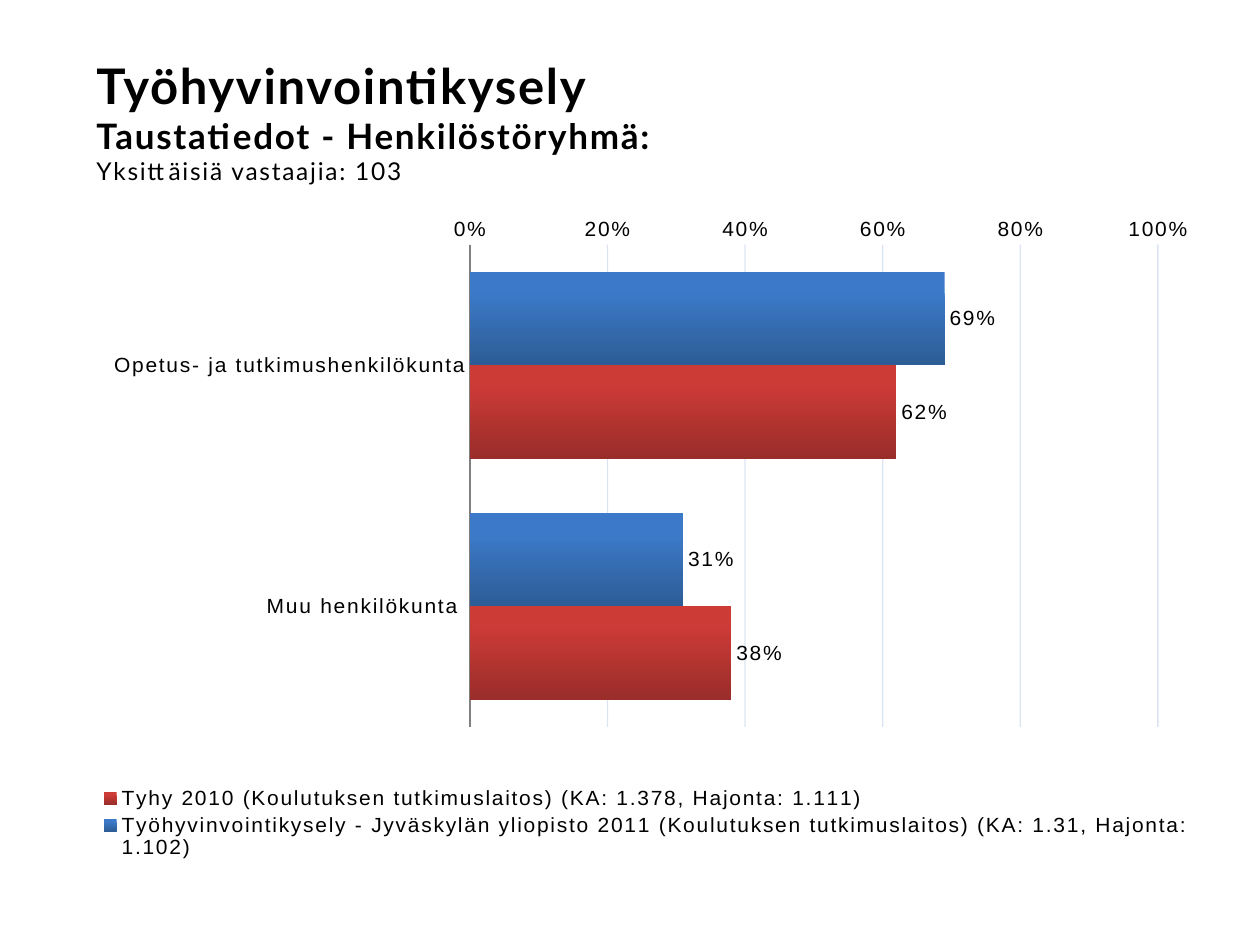
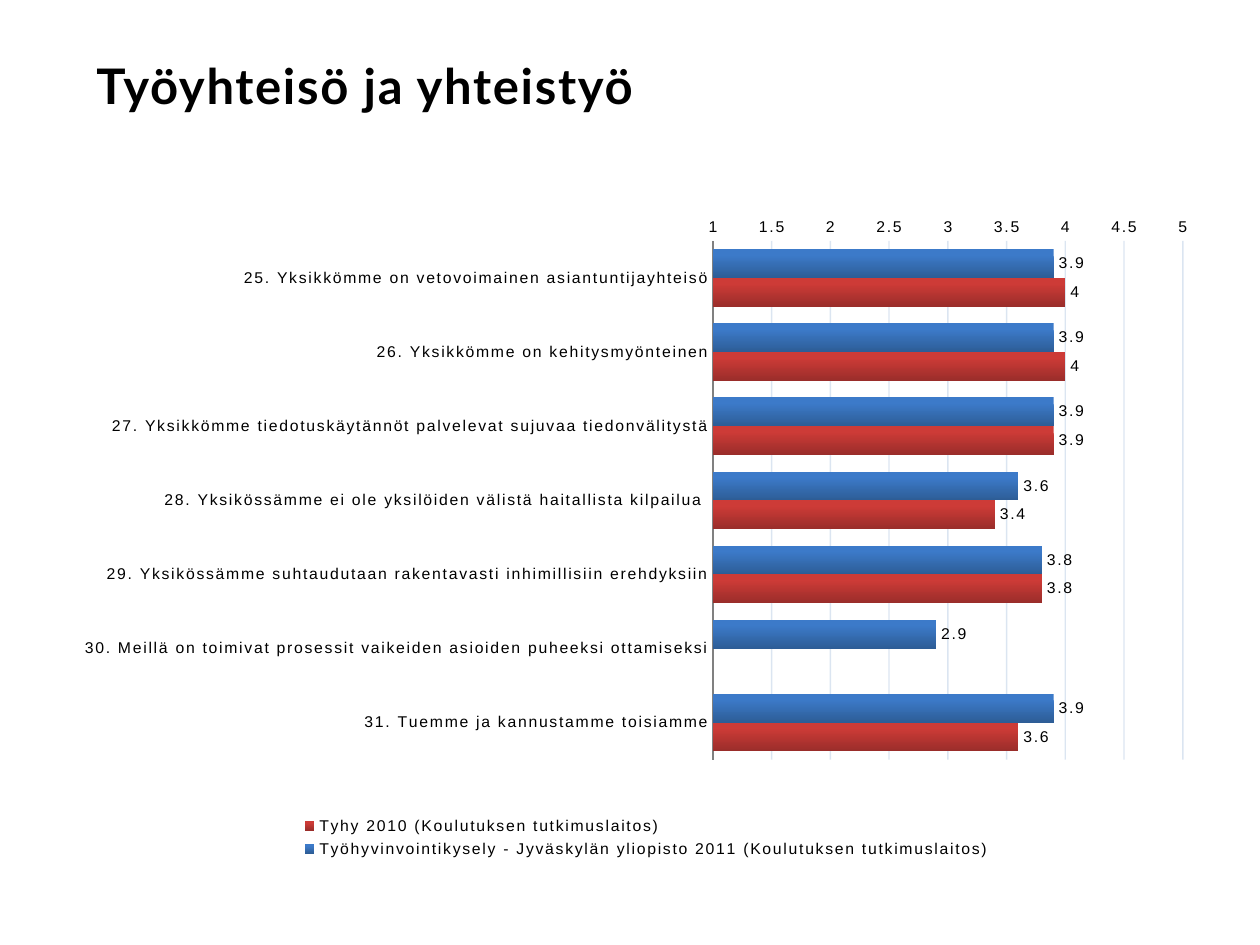
"""Build two slides of work wellbeing survey results as bar charts."""
from lxml import etree
from pptx import Presentation
from pptx.chart.data import CategoryChartData
from pptx.dml.color import RGBColor
from pptx.enum.chart import XL_AXIS_CROSSES as Crosses, XL_CHART_TYPE as ChartType
from pptx.enum.chart import XL_LABEL_POSITION as LabelSpot, XL_LEGEND_POSITION as LegendSpot
from pptx.enum.chart import XL_TICK_MARK as Tick
from pptx.oxml.ns import qn
from pptx.util import Emu, Pt

PX_PER_INCH = 126
BLACK = RGBColor(0x00, 0x00, 0x00)
GREY = RGBColor(0x80, 0x80, 0x80)
GRID_BLUE = RGBColor(0x4F, 0x81, 0xBD)
BLUE_LIGHT, BLUE_DARK = RGBColor(0x3C, 0x7A, 0xC9), RGBColor(0x2D, 0x5D, 0x96)
RED_LIGHT, RED_DARK = RGBColor(0xCD, 0x3B, 0x37), RGBColor(0x9A, 0x2D, 0x2A)
SERIES_SHADES = [(BLUE_LIGHT, BLUE_DARK), (RED_LIGHT, RED_DARK)]
LETTER_SPACING = "100"
FRAME_LEFT, FRAME_WIDTH = 84, 1125
TITLE_TOP, TITLE_HEIGHT = 49, 159
CHART_TOP, CHART_HEIGHT = 218, 645
PLOT_TOP = 231

SURVEY_2011 = "Työhyvinvointikysely - Jyväskylän yliopisto 2011 (Koulutuksen tutkimuslaitos)"
SURVEY_2010 = "Tyhy 2010 (Koulutuksen tutkimuslaitos)"

PAGES = [
    {
        "title": [
            ("Työhyvinvointikysely", 28, True),
            ("Taustatiedot - Henkilöstöryhmä:", 20, True),
            ("Yksittäisiä vastaajia: 103", 14, False),
        ],
        "categories": [" Opetus- ja tutkimushenkilökunta", " Muu henkilökunta "],
        "series": [
            (SURVEY_2011 + " (KA: 1.31, Hajonta: 1.102)", [0.69, 0.31]),
            (SURVEY_2010 + " (KA: 1.378, Hajonta: 1.111)", [0.62, 0.38]),
        ],
        "size": 12,
        "number_format": "0%",
        "scale": {"minimum_scale": 0, "maximum_scale": 1, "major_unit": 0.2},
        "plot": (470, 688, 493),
    },
    {
        "title": [("Työyhteisö ja yhteistyö", 28, True)],
        "categories": [
            "25. Yksikkömme on vetovoimainen asiantuntijayhteisö",
            "26. Yksikkömme on kehitysmyönteinen",
            "27. Yksikkömme tiedotuskäytännöt palvelevat sujuvaa tiedonvälitystä",
            "28. Yksikössämme ei ole yksilöiden välistä haitallista kilpailua ",
            "29. Yksikössämme suhtaudutaan rakentavasti inhimillisiin erehdyksiin",
            "30. Meillä on toimivat prosessit vaikeiden asioiden puheeksi ottamiseksi",
            "31. Tuemme ja kannustamme toisiamme",
        ],
        "series": [
            (SURVEY_2011, [3.9, 3.9, 3.9, 3.6, 3.8, 2.9, 3.9]),
            (SURVEY_2010, [4, 4, 3.9, 3.4, 3.8, None, 3.6]),
        ],
        "size": 9,
        "number_format": "General",
        "scale": {"minimum_scale": 1, "maximum_scale": 5, "major_unit": 0.5},
        "plot": (713, 470, 527),
    },
]


def px(length):
    return Emu(round(length * 914400 / PX_PER_INCH))


def style(target, formats):
    for name, value in formats.items():
        setattr(target, name, value)


deck = Presentation()
deck.slide_width, deck.slide_height = px(1260), px(945)

for content in PAGES:
    page = deck.slides.add_slide(deck.slide_layouts[6])

    box = page.shapes.add_textbox(px(FRAME_LEFT), px(TITLE_TOP), px(FRAME_WIDTH), px(TITLE_HEIGHT))
    box.text_frame.word_wrap = True
    for number, (text, size, bold) in enumerate(content["title"]):
        para = box.text_frame.add_paragraph() if number else box.text_frame.paragraphs[0]
        span = para.add_run()
        span.text = text
        style(span.font, {"name": "Lato", "size": Pt(size), "bold": bold})
        span.font.color.rgb = BLACK
        span.font._element.set("spc", LETTER_SPACING)

    data = CategoryChartData(number_format=content["number_format"])
    data.categories = content["categories"]
    for name, values in content["series"]:
        data.add_series(name, values)
    chart = page.shapes.add_chart(
        ChartType.BAR_CLUSTERED, px(FRAME_LEFT), px(CHART_TOP), px(FRAME_WIDTH), px(CHART_HEIGHT), data
    ).chart
    style(chart, {"has_title": False, "has_legend": True})
    style(chart.legend, {"position": LegendSpot.BOTTOM, "include_in_layout": False})
    style(chart.font, {"name": "Calibri", "size": Pt(10)})
    chart.font.color.rgb = BLACK

    category_axis, value_axis = chart.category_axis, chart.value_axis
    style(category_axis, {"reverse_order": True, "crosses": Crosses.MAXIMUM, "has_major_gridlines": False})
    category_axis.format.line.color.rgb = GREY
    category_axis.format.line.width = Pt(0.75)
    style(value_axis, content["scale"])
    value_axis.format.line.fill.background()
    for axis in (category_axis, value_axis):
        style(axis, {"major_tick_mark": Tick.NONE, "minor_tick_mark": Tick.NONE})
    grid_line = value_axis.major_gridlines.format.line
    grid_line.color.rgb = GRID_BLUE
    grid_line.width = Pt(0.75)
    grid_color = value_axis.major_gridlines._xAx.find(f"{qn('c:majorGridlines')}//{qn('a:srgbClr')}")
    etree.SubElement(grid_color, qn("a:alpha"), val="20000")

    plot = chart.plots[0]
    style(plot, {"gap_width": 58, "vary_by_categories": False, "has_data_labels": True})
    style(plot.data_labels, {"show_value": True, "position": LabelSpot.OUTSIDE_END})
    for labels in (value_axis.tick_labels, plot.data_labels):
        style(labels, {"number_format": content["number_format"], "number_format_is_linked": False})
    for part in (category_axis.tick_labels, value_axis.tick_labels, plot.data_labels, chart.legend):
        style(part.font, {"name": "Arial", "size": Pt(content["size"])})
        part.font.color.rgb = BLACK

    for series, shades in zip(plot.series, SERIES_SHADES):
        fill = series.format.fill
        fill.gradient()
        fill.gradient_angle = 270
        for stop, shade, position in zip(fill.gradient_stops, shades, (0.2, 1)):
            stop.color.rgb = shade
            stop.position = position
        series.format.line.fill.background()

    for props in chart._chartSpace.iter(qn("a:defRPr")):
        props.set("spc", LETTER_SPACING)

    plot_left, plot_width, plot_height = content["plot"]
    plot_area = chart._chartSpace.find(f".//{qn('c:plotArea')}")
    for old_layout in plot_area.findall(qn("c:layout")):
        plot_area.remove(old_layout)
    layout = etree.Element(qn("c:layout"))
    plot_area.insert(0, layout)
    manual = etree.SubElement(layout, qn("c:manualLayout"))
    for tag, value in [
        ("layoutTarget", "inner"),
        ("xMode", "edge"),
        ("yMode", "edge"),
        ("x", (plot_left - FRAME_LEFT) / FRAME_WIDTH),
        ("y", (PLOT_TOP - CHART_TOP) / CHART_HEIGHT),
        ("w", plot_width / FRAME_WIDTH),
        ("h", plot_height / CHART_HEIGHT),
    ]:
        etree.SubElement(manual, qn(f"c:{tag}"), val=str(value))

deck.save("out.pptx")
